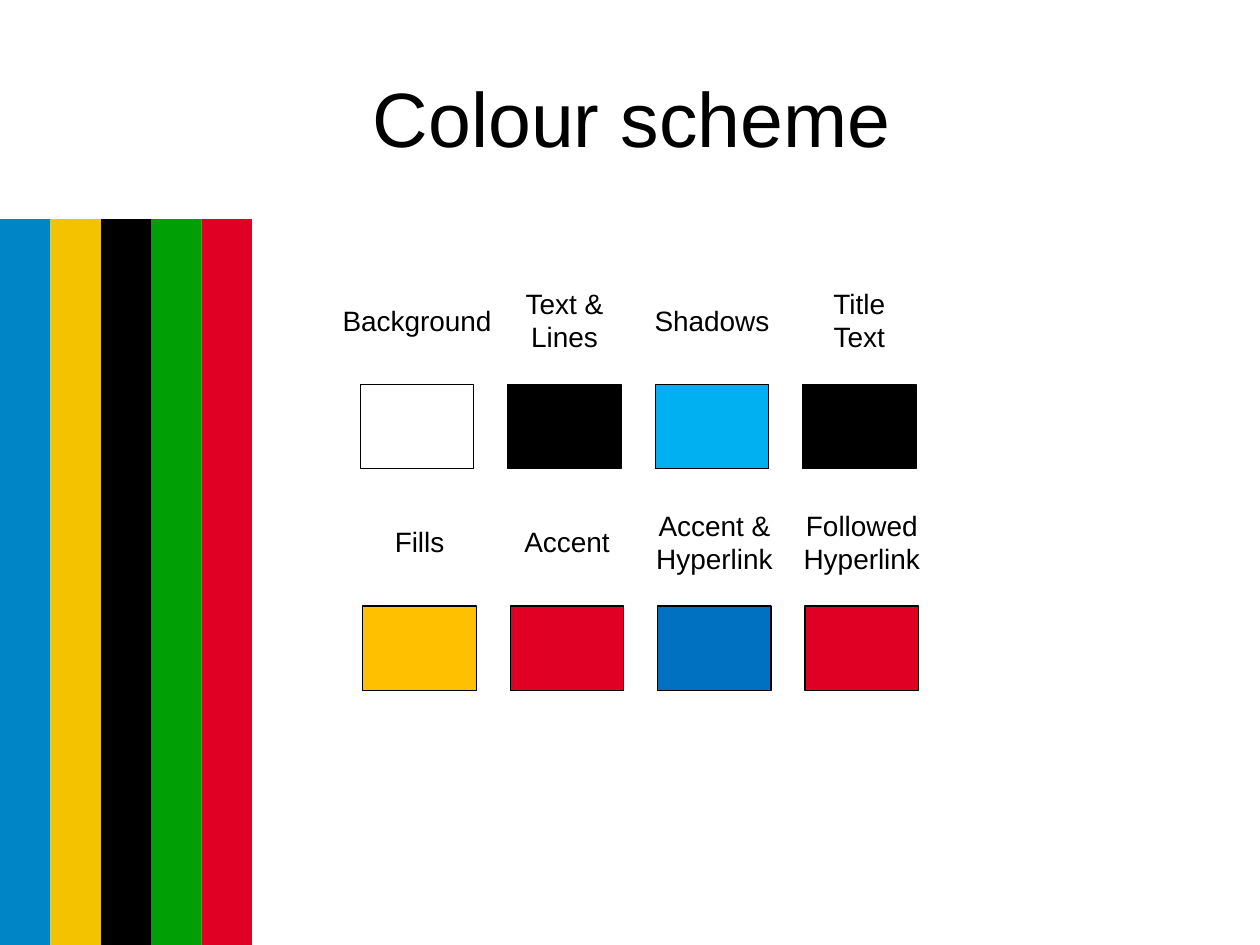
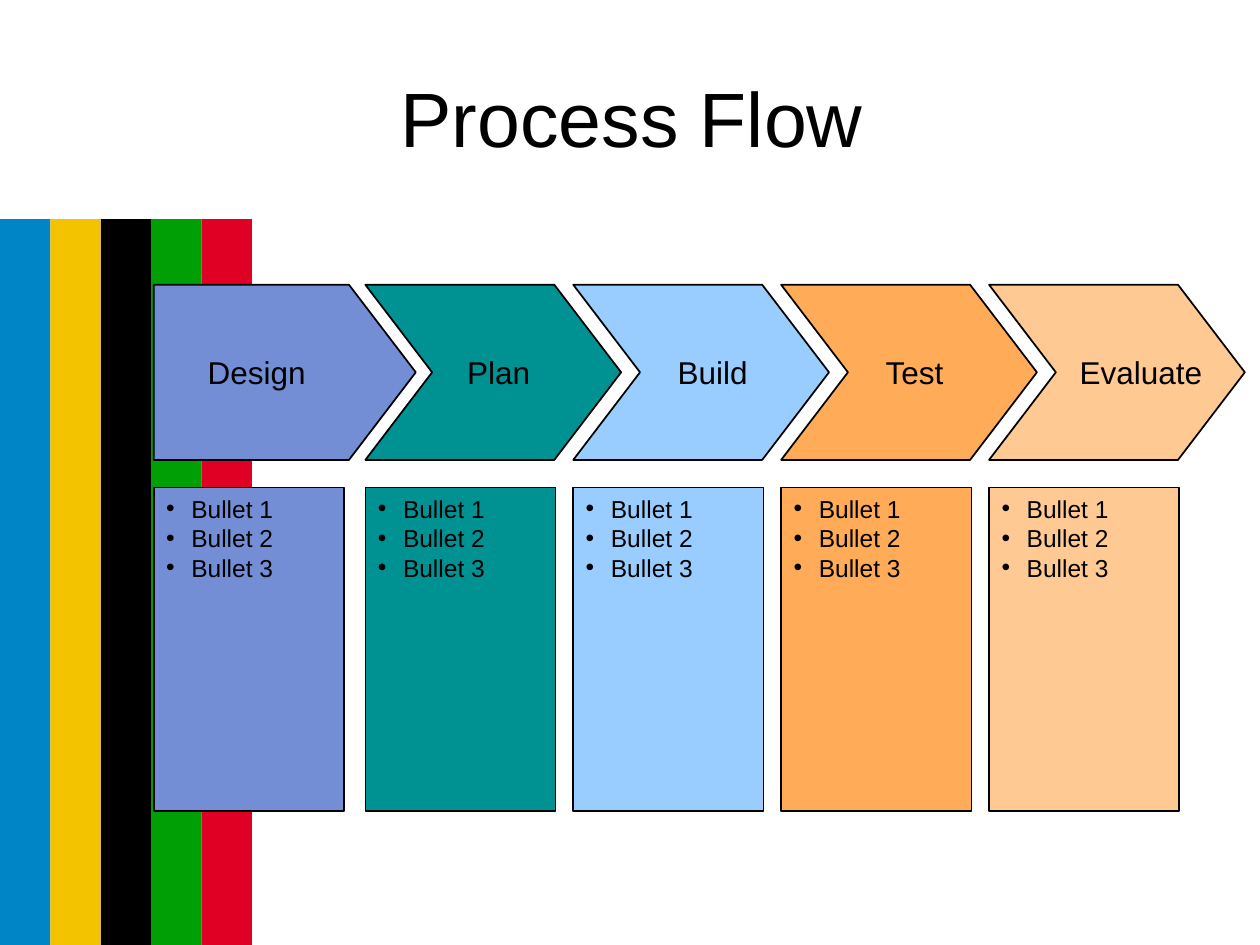
from lxml.etree import SubElement
from pptx import Presentation
from pptx.dml.color import RGBColor
from pptx.enum.shapes import MSO_SHAPE
from pptx.enum.text import MSO_ANCHOR, PP_ALIGN
from pptx.oxml.ns import qn
from pptx.util import Inches, Pt

FONT = "Arial"
COLORS = {
    "black": "000000", "white": "FFFFFF", "sky": "00B0F0", "amber": "FFC000",
    "red": "DF0024", "blue": "0070C0",
    "band blue": "0085C7", "band yellow": "F4C300", "band green": "009F06",
    "periwinkle": "748ED6", "teal": "009193", "light blue": "99CCFF",
    "orange": "FFAB57", "peach": "FFC993",
}
BANDS = ["band blue", "band yellow", "black", "band green", "red"]
BAND_WIDTH, BAND_TOP, BAND_HEIGHT = 0.4, 1.74, 5.76

# Each row: left edge, top edge, (label, colour) of its swatches
SWATCH_ROWS = [
    (2.86, 3.05, [("Background", "white"), ("Text &\nLines", "black"),
                  ("Shadows", "sky"), ("Title\nText", "black")]),
    (2.88, 4.81, [("Fills", "amber"), ("Accent", "red"),
                  ("Accent &\nHyperlink", "blue"), ("Followed\nHyperlink", "red")]),
]
SWATCH_WIDTH, SWATCH_HEIGHT, SWATCH_PITCH = 0.9, 0.67, 1.17
LABEL_WIDTH, LABEL_HEIGHT, LABEL_RISE = 1.39, 0.64, 0.83

# Stage name, colour, left edge, left edge and width of its name
STAGES = [
    ("Design", "periwinkle", 1.22, 1.55, 0.98),
    ("Plan", "teal", 2.9, 3.61, 0.7),
    ("Build", "light blue", 4.55, 5.28, 0.76),
    ("Test", "orange", 6.2, 6.93, 0.69),
    ("Evaluate", "peach", 7.85, 8.47, 1.17),
]
BULLETS = "Bullet 1\nBullet 2\nBullet 3"
ARROW_TOP, ARROW_HEIGHT, ARROW_TIP = 2.26, 1.39, 0.53
BOX_TOP, BOX_WIDTH, BOX_HEIGHT = 3.87, 1.51, 2.57


def rgb(color):
    return RGBColor.from_string(COLORS[color])


def add_bullet(paragraph):
    properties = paragraph._p.get_or_add_pPr()
    properties.set("marL", str(Inches(0.2)))
    properties.set("indent", str(-Inches(0.2)))
    SubElement(properties, qn("a:buFont"), typeface=FONT)
    SubElement(properties, qn("a:buChar"), char="•")


def write(shape, text, size=16, align=PP_ALIGN.LEFT, anchor=MSO_ANCHOR.TOP,
          color="black", wrap=True, bullets=False):
    frame = shape.text_frame
    frame.text = text
    frame.word_wrap = wrap
    frame.vertical_anchor = anchor
    for paragraph in frame.paragraphs:
        paragraph.alignment = align
        if bullets:
            add_bullet(paragraph)
        for run in paragraph.runs:
            run.font.size = Pt(size)
            run.font.name = FONT
            run.font.color.rgb = rgb(color)


def paint(shape, fill, line_width=None):
    shape.shadow.inherit = False
    shape.fill.solid()
    shape.fill.fore_color.rgb = rgb(fill)
    if line_width:
        shape.line.color.rgb = rgb("black")
        shape.line.width = Pt(line_width)
    else:
        shape.line.fill.background()


def add_rectangle(slide, left, top, width, height, fill, line_width=None):
    rectangle = slide.shapes.add_shape(
        MSO_SHAPE.RECTANGLE, Inches(left), Inches(top), Inches(width), Inches(height))
    paint(rectangle, fill, line_width)
    return rectangle


def add_label(slide, text, left, top, width, height, **style):
    label = slide.shapes.add_textbox(
        Inches(left), Inches(top), Inches(width), Inches(height))
    write(label, text, wrap=False, **style)


def add_arrow(slide, left, body, notch, fill):
    """Draw a process arrow whose back is cut in by notch inches."""
    middle, bottom = ARROW_TOP + ARROW_HEIGHT / 2, ARROW_TOP + ARROW_HEIGHT
    outline = [(left, ARROW_TOP), (left + body, ARROW_TOP),
               (left + body + ARROW_TIP, middle),
               (left + body, bottom), (left, bottom)]
    if notch:
        outline.append((left + notch, middle))
    points = [(Inches(x), Inches(y)) for x, y in outline]
    builder = slide.shapes.build_freeform(*points[0])
    builder.add_line_segments(points[1:], close=True)
    paint(builder.convert_to_shape(), fill, 1)


def style_layout(layout, slide):
    """Place the title and move the bands, made on the slide, to the layout."""
    title = layout.placeholders[0]
    title.left, title.top = Inches(0.53), Inches(0.3)
    title.width, title.height = Inches(8.97), Inches(1.25)
    for index, color in enumerate(BANDS):
        band = add_rectangle(slide, index * BAND_WIDTH, BAND_TOP,
                             BAND_WIDTH, BAND_HEIGHT, color)
        band.element.nvSpPr.cNvPr.set("id", str(20 + index))
        layout.shapes.element.insert(2 + index, band.element)


def add_titled_slide(deck, layout, title):
    slide = deck.slides.add_slide(layout)
    write(slide.shapes.title, title, size=44, align=PP_ALIGN.CENTER,
          anchor=MSO_ANCHOR.MIDDLE)
    return slide


def fill_colour_scheme(slide):
    for row_left, top, swatches in SWATCH_ROWS:
        for column, (name, color) in enumerate(swatches):
            left = row_left + column * SWATCH_PITCH
            add_rectangle(slide, left, top, SWATCH_WIDTH, SWATCH_HEIGHT, color, 0.75)
            add_label(slide, name, left + (SWATCH_WIDTH - LABEL_WIDTH) / 2,
                      top - LABEL_RISE, LABEL_WIDTH, LABEL_HEIGHT,
                      align=PP_ALIGN.CENTER, anchor=MSO_ANCHOR.MIDDLE)


def fill_process_flow(slide):
    for index, (name, color, left, name_left, name_width) in enumerate(STAGES):
        box = add_rectangle(slide, left, BOX_TOP, BOX_WIDTH, BOX_HEIGHT, color, 1)
        write(box, BULLETS, size=14, bullets=True)
        first = index == 0
        add_arrow(slide, left, 1.55 if first else 1.5, 0 if first else ARROW_TIP, color)
        # The margin keeps each name on one line
        add_label(slide, name, name_left, 2.75, name_width + 0.1, 0.4, size=18)


def main():
    deck = Presentation()
    deck.slide_width, deck.slide_height = Inches(10), Inches(7.5)
    layout = deck.slide_layouts[5]
    colour_scheme = add_titled_slide(deck, layout, "Colour scheme")
    style_layout(layout, colour_scheme)
    fill_colour_scheme(colour_scheme)
    fill_process_flow(add_titled_slide(deck, layout, "Process Flow"))
    deck.save("out.pptx")


if __name__ == "__main__":
    main()
